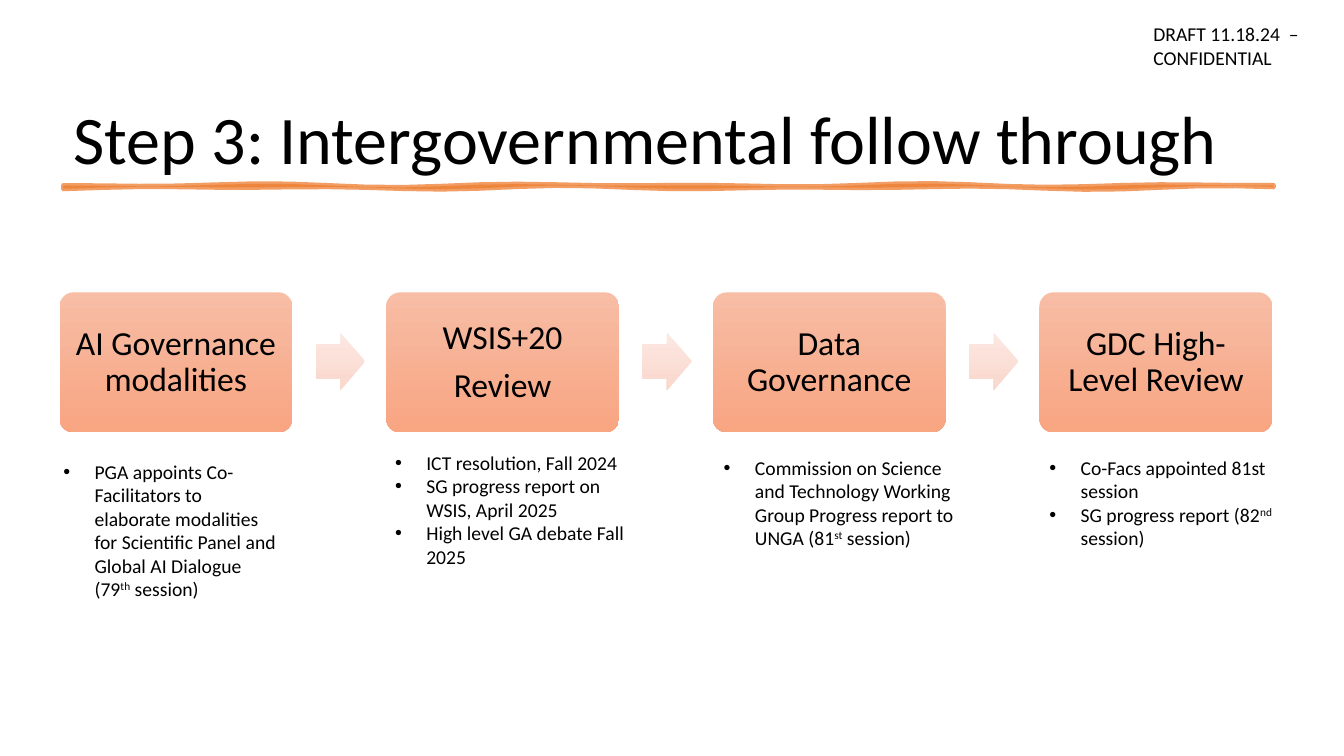
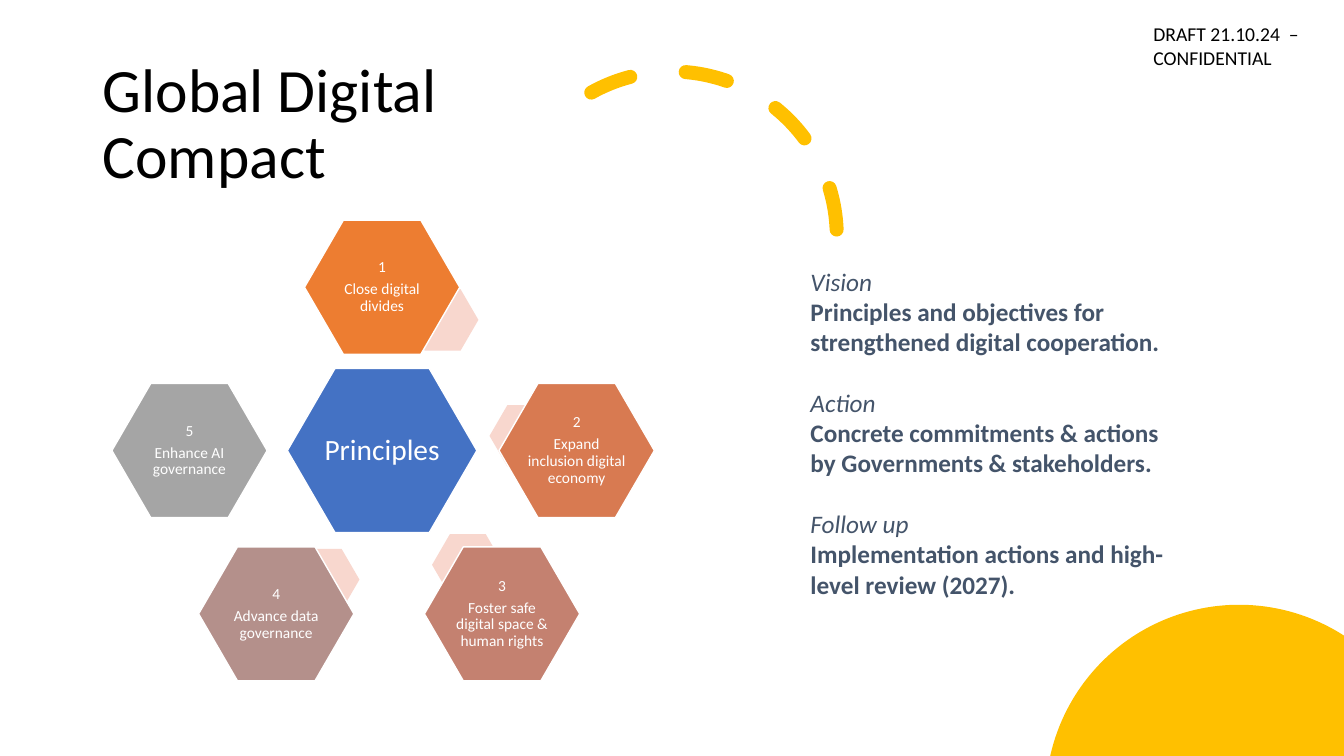
"""Two slides: a four-step follow-up process and a wheel of compact principles."""
import math

from lxml import etree
from pptx import Presentation
from pptx import util as u
from pptx.dml.color import RGBColor
from pptx.enum import dml, shapes, text
from pptx.oxml.ns import qn

INK, WHITE, SLATE = "000000", "FFFFFF", "44546A"
ORANGE, GOLD, BLUE, BLUSH = "ED7D31", "FFC000", "4472C4", "F8D7CE"
CARD_SHADES = ("F7BDA5", "F8A582")
ARROW_SHADES = ("FCE8E2", "FAD7CC")
WIDTH, HEIGHT = 13.33, 7.5
CENTERED = {"alignment": text.PP_ALIGN.CENTER, "line_spacing": 0.9}
TITLE = {"line_spacing": 0.9}
MARGINS = ("margin_left", "margin_top", "margin_right", "margin_bottom")


def paint(fill, *colors):
    """Fill with nothing, one colour, or a top-down gradient of two."""
    if not colors:
        fill.background()
    elif len(colors) == 1:
        fill.solid()
        fill.fore_color.rgb = RGBColor.from_string(colors[0])
    else:
        fill.gradient()
        fill.gradient_angle = 270
        for stop, color in zip(fill.gradient_stops, colors):
            stop.color.rgb = RGBColor.from_string(color)


def write(frame, lines, size, color, layout=None, bullet=False, **font_format):
    """Append paragraphs; text between carets is superscript."""
    frame.word_wrap = True
    for line in lines:
        paragraph = frame.paragraphs[0]
        if paragraph.runs:
            paragraph = frame.add_paragraph()
        for name, value in (layout or {}).items():
            setattr(paragraph, name, value)
        if bullet:
            properties = paragraph._p.get_or_add_pPr()
            properties.set("marL", str(u.Inches(0.31)))
            properties.set("indent", str(-u.Inches(0.31)))
            etree.SubElement(properties, qn("a:buFont")).set("typeface", "Arial")
            etree.SubElement(properties, qn("a:buChar")).set("char", "•")
        for index, part in enumerate(line.split("^")):
            run = paragraph.add_run()
            run.text = part
            values = {"name": "Calibri", "size": u.Pt(size), **font_format}
            for name, value in values.items():
                setattr(run.font, name, value)
            paint(run.font.fill, color)
            if index % 2:
                run.font._element.set("baseline", "30000")


presentation = Presentation()
presentation.slide_width = u.Inches(WIDTH)
presentation.slide_height = u.Inches(HEIGHT)
blank = presentation.slide_layouts[6]

headings = [
    ("Step 3: Intergovernmental follow through", 48.6, (0.63, 0.26, 12.05, 1.57),
     text.MSO_ANCHOR.BOTTOM, "DRAFT 11.18.24  –"),
    ("Global Digital Compact", 44, (0.92, 0.52, 5.75, 1.45),
     text.MSO_ANCHOR.MIDDLE, "DRAFT 21.10.24  –"),
]
for heading, size, box, anchor, draft in headings:
    slide = presentation.slides.add_slide(blank)
    title = slide.shapes.add_textbox(*map(u.Inches, box)).text_frame
    title.vertical_anchor = anchor
    write(title, [heading], size, INK, TITLE)
    stamp = slide.shapes.add_textbox(*map(u.Inches, (11.34, 0.17, 1.99, 0.81)))
    write(stamp.text_frame, [draft, "CONFIDENTIAL"], 14, INK)

process, compact = presentation.slides

STRAND_STEPS = 32
upper, lower = [
    [(u.Inches(0.63 + 12 * step / STRAND_STEPS),
      u.Inches(middle + 0.02 * math.sin(step * 0.9 + phase) * math.sin(step * 0.2 + phase)))
     for step in range(STRAND_STEPS + 1)]
    for middle, phase in ((1.84, 0), (1.86, 2.2))
]
builder = process.shapes.build_freeform(*upper[0], scale=1.0)
builder.add_line_segments(upper[1:] + lower[::-1], close=True)
strand = builder.convert_to_shape()
strand.line.width = u.Pt(3.5)
for fill in (strand.fill, strand.line.fill):
    paint(fill, ORANGE)
for color in strand._element.spPr.iter(qn("a:srgbClr")):
    etree.SubElement(color, qn("a:alpha")).set("val", "75000")

CARD_LEFT, CARD_PITCH, CARD_TOP = 0.59, 3.24, 2.9
steps = [
    (["AI Governance modalities"], (0.53, 4.51, 2.35, 1.75),
     ["PGA appoints Co-Facilitators to elaborate modalities for Scientific Panel "
      "and Global AI Dialogue (79^th^ session)"]),
    (["WSIS+20", "Review"], (3.82, 4.42, 2.53, 1.28),
     ["ICT resolution, Fall 2024", "SG progress report on WSIS, April 2025",
      "High level GA debate Fall 2025"]),
    (["Data Governance"], (7.08, 4.47, 2.53, 1.04),
     ["Commission on Science and Technology Working Group Progress report to "
      "UNGA (81^st^ session)"]),
    (["GDC High-Level Review"], (10.31, 4.47, 2.53, 1.04),
     ["Co-Facs appointed 81st session", "SG progress report (82^nd^ session)"]),
]
for column, (label, box, notes) in enumerate(steps):
    left = CARD_LEFT + column * CARD_PITCH
    card = process.shapes.add_shape(
        shapes.MSO_SHAPE.ROUNDED_RECTANGLE,
        *map(u.Inches, (left, CARD_TOP, 2.31, 1.39)))
    card.adjustments[0] = 0.1
    paint(card.fill, *CARD_SHADES)
    paint(card.line.fill)
    for margin in MARGINS:
        setattr(card.text_frame, margin, u.Inches(0.1))
    write(card.text_frame, label, 24, INK, {**CENTERED, "space_after": u.Pt(8.4)})
    details = process.shapes.add_textbox(*map(u.Inches, box))
    write(details.text_frame, notes, 14, INK, bullet=True)
    if column < len(steps) - 1:
        arrow = process.shapes.add_shape(
            shapes.MSO_SHAPE.RIGHT_ARROW,
            *map(u.Inches, (left + 2.54, CARD_TOP + 0.4, 0.49, 0.57)))
        arrow.adjustments[0] = 0.6
        paint(arrow.fill, *ARROW_SHADES)
        paint(arrow.line.fill)

SUN_X, SUN_Y, SUN_RADIUS = 12.29, 7.92, 1.92
rise = math.asin((SUN_Y - HEIGHT) / SUN_RADIUS)
fall = math.asin((WIDTH - SUN_X) / SUN_RADIUS)
outline = [
    (SUN_X - SUN_RADIUS * math.cos(rise), HEIGHT),
    (SUN_X, SUN_Y - SUN_RADIUS),
    (WIDTH, SUN_Y - SUN_RADIUS * math.cos(fall)),
    (WIDTH, HEIGHT),
]
points = [(u.Inches(x), u.Inches(y)) for x, y in outline]
builder = compact.shapes.build_freeform(*points[0], scale=1.0)
builder.add_line_segments(points[1:], close=True)
sun = builder.convert_to_shape()
paint(sun.fill, GOLD)
paint(sun.line.fill)
edges = list(sun._element.spPr.iter(qn("a:lnTo")))
sweeps = [(math.pi + rise, math.pi / 2 - rise), (1.5 * math.pi, fall)]
for edge, (start, sweep) in zip(edges, sweeps):
    curve = etree.Element(qn("a:arcTo"))
    for name in ("wR", "hR"):
        curve.set(name, str(u.Inches(SUN_RADIUS)))
    for name, angle in (("stAng", start), ("swAng", sweep)):
        curve.set(name, str(round(math.degrees(angle) * 60000)))
    edge.getparent().replace(edge, curve)

arc = compact.shapes.add_shape(
    shapes.MSO_SHAPE.ARC, *map(u.Inches, (5.03, 0.71, 3.27, 3.27)))
arc.adjustments[0], arc.adjustments[1] = 144.42, 0
paint(arc.fill)
paint(arc.line.fill, GOLD)
arc.line.width = u.Pt(10)
arc.line.dash_style = dml.MSO_LINE.DASH
arc.line._get_or_add_ln().set("cap", "rnd")

HUB_X, HUB_Y, ROW = 3.79, 4.47, 1.62
PETAL, HUB, ACCENT = (1.54, 1.33), (1.88, 1.63), (0.71, 0.61)
hexagons = [
    (0, 0, HUB, BLUE, ["Principles"], 21),
    (0.6, -0.8, ACCENT, BLUSH, [], 0),
    (0, -1, PETAL, ORANGE, ["1", "Close digital divides"], 11),
    (1.42, -0.09, ACCENT, BLUSH, [], 0),
    (1.93, 0, PETAL, "D87A51", ["2", "Expand inclusion digital economy"], 11),
    (0.85, 0.7, ACCENT, BLUSH, [], 0),
    (1.19, 1, PETAL, "C48170", ["3", "Foster safe digital space & human rights"], 11),
    (-0.58, 0.79, ACCENT, BLUSH, [], 0),
    (-1.05, 1, PETAL, "B4908B", ["4", "Advance data governance"], 11),
    (-1.91, 0, PETAL, "A5A5A5", ["5", "Enhance AI governance"], 11),
]
for shift, row, (width, height), color, label, size in hexagons:
    hexagon = compact.shapes.add_shape(
        shapes.MSO_SHAPE.HEXAGON,
        *map(u.Inches, (HUB_X + shift - width / 2, HUB_Y + row * ROW - height / 2,
                        width, height)))
    hexagon.adjustments[0] = 0.29
    paint(hexagon.fill, color)
    paint(hexagon.line.fill, *([WHITE] if label else []))
    if label:
        hexagon.line.width = u.Pt(1)
        for margin in MARGINS:
            setattr(hexagon.text_frame, margin, u.Inches(0.02))
        write(hexagon.text_frame, label, size, WHITE,
              {**CENTERED, "space_after": u.Pt(size * 0.35)})

aims = [
    ("Vision", "Principles and objectives for strengthened digital cooperation."),
    ("Action", "Concrete commitments & actions by Governments & stakeholders."),
    ("Follow up", "Implementation actions and high-level review (2027)."),
]
summary = compact.shapes.add_textbox(*map(u.Inches, (7.94, 2.59, 3.85, 3.74))).text_frame
for index, (name, aim) in enumerate(aims):
    write(summary, [name], 18, SLATE, {"space_before": u.Pt(21.8 if index else 0)}, italic=True)
    write(summary, [aim], 18, SLATE, bold=True)

for slide in presentation.slides:
    for shape in slide.shapes:
        shape.shadow.inherit = False

presentation.save("out.pptx")
